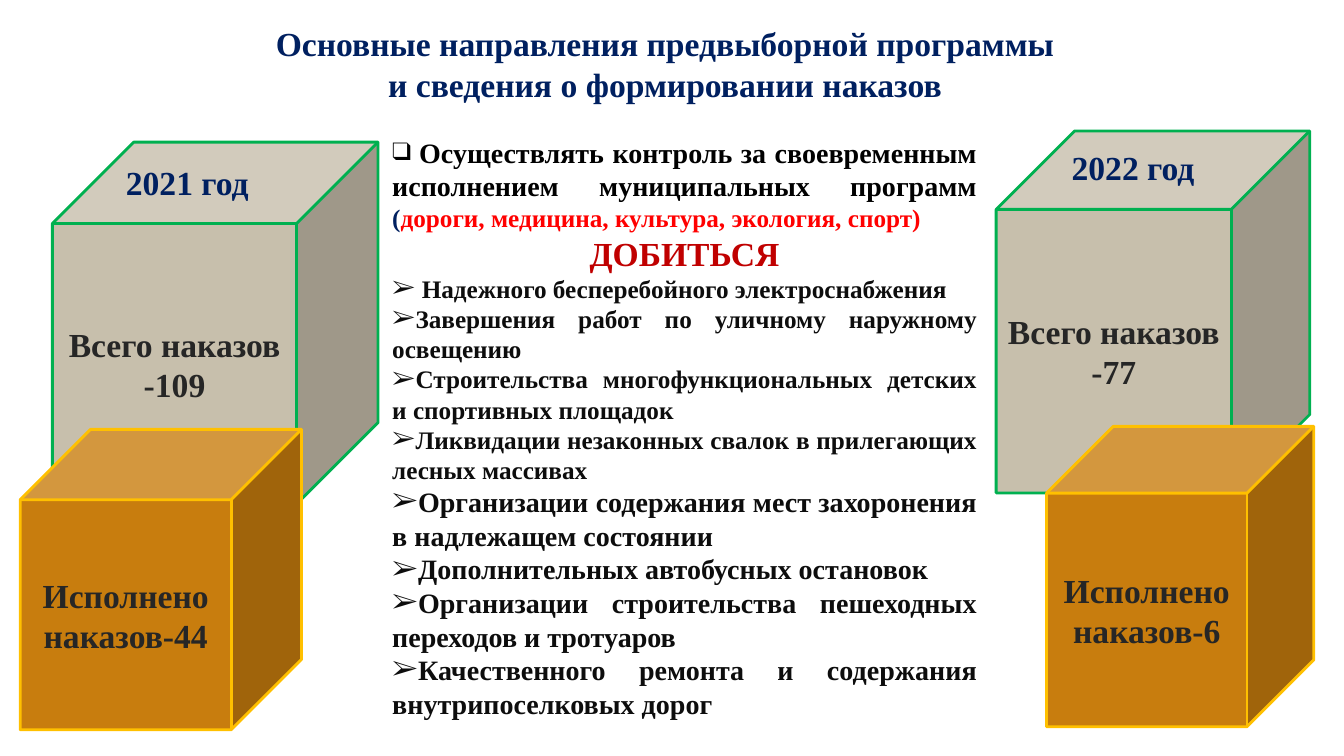
from dataclasses import dataclass

import pptx
import pptx.dml.color
import pptx.enum.shapes
import pptx.enum.text
import pptx.oxml
import pptx.oxml.ns
import pptx.util

Inches = pptx.util.Inches
ALIGN = pptx.enum.text.PP_ALIGN
ANCHOR = pptx.enum.text.MSO_ANCHOR
FONT = "Times New Roman"
NAVY = "002060"
BLACK = "000000"
DARK = "0D0D0D"
CUBE_TEXT = "262626"


@dataclass
class Box:
    left: float
    top: float
    width: float
    height: float


@dataclass
class Cube:
    text: str
    box: Box
    fill: str
    line: str


@dataclass
class Label:
    text: str
    box: Box


@dataclass
class Phrase:
    text: str
    size: int
    color: str


@dataclass
class Item:
    phrases: list[Phrase]
    bullet: str = "➢"


def rgb(color: str) -> pptx.dml.color.RGBColor:
    return pptx.dml.color.RGBColor.from_string(color)


def format_run(r, size: int, color: str) -> None:
    r.font.name = FONT
    r.font.size = pptx.util.Pt(size)
    r.font.bold = True
    r.font.color.rgb = rgb(color)


def place(sp, box: Box) -> None:
    sp.left, sp.top = Inches(box.left), Inches(box.top)
    sp.width, sp.height = Inches(box.width), Inches(box.height)


def set_frame(tf, anchor) -> None:
    tf.word_wrap = True
    tf.auto_size = pptx.enum.text.MSO_AUTO_SIZE.NONE
    tf.vertical_anchor = anchor


def write(sp, text: str, color: str, align, anchor) -> None:
    tf = sp.text_frame
    set_frame(tf, anchor)
    tf.text = text
    p = tf.paragraphs[0]
    p.alignment = align
    format_run(p.runs[0], 24, color)


def add_cube(slide, cube: Cube) -> None:
    sp = slide.shapes.add_shape(pptx.enum.shapes.MSO_SHAPE.CUBE, 0, 0, 0, 0)
    place(sp, cube.box)
    sp.shadow.inherit = False
    sp.fill.solid()
    sp.fill.fore_color.rgb = rgb(cube.fill)
    sp.line.color.rgb = rgb(cube.line)
    sp.line.width = pptx.util.Pt(2)
    write(sp, cube.text, CUBE_TEXT, ALIGN.CENTER, ANCHOR.MIDDLE)


def add_label(slide, label: Label) -> None:
    sp = slide.shapes.add_textbox(0, 0, 0, 0)
    place(sp, label.box)
    write(sp, label.text, NAVY, ALIGN.LEFT, ANCHOR.TOP)


def set_bullet(p, char: str) -> None:
    pPr = p._p.get_or_add_pPr()
    pPr.set("marL", "0")
    pPr.set("indent", "0")
    ns = pptx.oxml.ns.nsdecls("a")
    if char:
        pPr.append(pptx.oxml.parse_xml(f'<a:buFont {ns} typeface="{FONT}"/>'))
        pPr.append(pptx.oxml.parse_xml(f'<a:buChar {ns} char="{char}"/>'))
    else:
        pPr.append(pptx.oxml.parse_xml(f"<a:buNone {ns}/>"))


def fill_list(sp, items: list[Item]) -> None:
    tf = sp.text_frame
    set_frame(tf, ANCHOR.TOP)
    for i, item in enumerate(items):
        p = tf.add_paragraph() if i else tf.paragraphs[0]
        p.alignment = ALIGN.JUSTIFY if item.bullet else ALIGN.CENTER
        p.space_before = p.space_after = pptx.util.Pt(0)
        set_bullet(p, item.bullet)
        for phrase in item.phrases:
            r = p.add_run()
            r.text = phrase.text
            format_run(r, phrase.size, phrase.color)


TITLE = "Основные направления предвыборной программы и сведения о формировании наказов"

TOTAL = ("C7BFAC", "00B050")
DONE = ("C87D0E", "FFC000")
CUBES = [
    Cube("Всего наказов -109", Box(0.52, 1.41, 3.23, 3.59), *TOTAL),
    Cube("Исполнено наказов-44", Box(0.2, 4.26, 2.79, 2.98), *DONE),
    Cube("Всего наказов -77", Box(9.88, 1.3, 3.11, 3.59), *TOTAL),
    Cube("Исполнено наказов-6", Box(10.38, 4.23, 2.65, 2.98), *DONE),
]
YEARS = [
    Label("2021 год", Box(1.15, 1.56, 1.74, 0.5)),
    Label("2022 год", Box(10.53, 1.41, 1.74, 0.5)),
]
GOALS = [
    (" Надежного бесперебойного электроснабжения", 18),
    ("Завершения работ по уличному наружному освещению", 18),
    ("Строительства многофункциональных детских и спортивных площадок", 18),
    ("Ликвидации незаконных свалок в прилегающих лесных массивах", 18),
    ("Организации содержания мест захоронения в надлежащем состоянии", 20),
    ("Дополнительных автобусных остановок", 20),
    ("Организации строительства пешеходных переходов и тротуаров", 20),
    ("Качественного ремонта и содержания внутрипоселковых дорог", 20),
]
ITEMS = [
    Item([
        Phrase(" ", 18, BLACK),
        Phrase("Осуществлять контроль за своевременным исполнением муниципальных программ ", 20, BLACK),
        Phrase("(", 18, NAVY),
        Phrase("дороги, медицина, культура, экология, спорт)", 18, "FF0000"),
    ], "❑"),
    Item([Phrase("ДОБИТЬСЯ", 24, "C00000")], ""),
    *(Item([Phrase(text, size, DARK)]) for text, size in GOALS),
]


def main() -> None:
    prs = pptx.Presentation()
    prs.slide_width, prs.slide_height = Inches(13.33), Inches(7.5)
    slide = prs.slides.add_slide(prs.slide_layouts[1])
    title, body = slide.placeholders
    place(title, Box(2.55, 0.18, 8.09, 0.91))
    write(title, TITLE, NAVY, ALIGN.CENTER, ANCHOR.TOP)
    place(body, Box(3.79, 1.29, 6, 5.96))
    fill_list(body, ITEMS)
    for cube in CUBES:
        add_cube(slide, cube)
    for year in YEARS:
        add_label(slide, year)
    prs.save("out.pptx")


if __name__ == "__main__":
    main()
